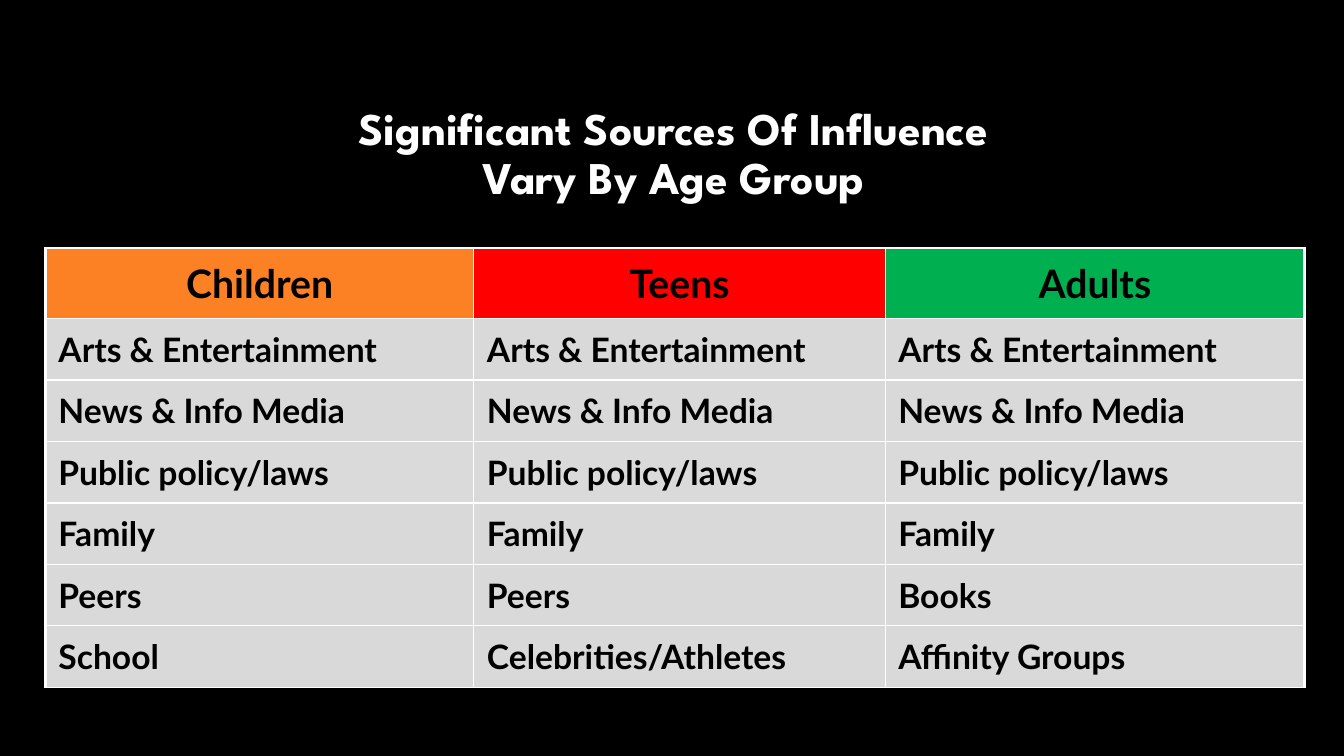
import pptx
import pptx.util
import pptx.dml.color
import pptx.enum.text
import pptx.oxml.ns
from lxml import etree

Inches, Pt = pptx.util.Inches, pptx.util.Pt
RGB = pptx.dml.color.RGBColor.from_string
ALIGN = pptx.enum.text.PP_ALIGN
MIDDLE = pptx.enum.text.MSO_ANCHOR.MIDDLE
qn = pptx.oxml.ns.qn

COLORS = {"black": "000000", "white": "FFFFFF", "children": "FC8124",
          "teens": "FF0000", "adults": "00B050", "body": "D9D9D9", "policy": "DADADA"}


def add_run(p, text, font, size, color):
    r = p.add_run()
    r.text = text
    r.font.name, r.font.size, r.font.bold = font, Pt(size), True
    r.font.color.rgb = RGB(COLORS[color])


def set_borders(cell, widths):
    """Draw white borders; widths holds points for left, right, top, bottom."""
    tc_pr = cell._tc.get_or_add_tcPr()
    for i, (side, width) in enumerate(zip("LRTB", widths)):
        ln = etree.Element(qn("a:ln" + side), w=str(int(Pt(width))))
        fill = etree.SubElement(ln, qn("a:solidFill"))
        etree.SubElement(fill, qn("a:srgbClr"), val=COLORS["white"])
        tc_pr.insert(i, ln)


prs = pptx.Presentation()
prs.slide_width, prs.slide_height = Inches(13.33), Inches(7.5)
s = prs.slides.add_slide(prs.slide_layouts[6])
s.background.fill.solid()
s.background.fill.fore_color.rgb = RGB(COLORS["black"])

# Title
tf = s.shapes.add_textbox(Inches(3.17), Inches(0.84), Inches(7.02), Inches(1.41)).text_frame
tf.word_wrap = True
tf.vertical_anchor = MIDDLE
p = tf.paragraphs[0]
p.alignment, p.line_spacing = ALIGN.CENTER, 0.9
add_run(p, "Significant Sources Of Influence", "League Spartan", 32.4, "white")
p.add_line_break()
add_run(p, "Vary By Age Group", "League Spartan", 32.4, "white")

# Table of influences by age group
rows = [
    ("Children", "Teens", "Adults"),
    ("Arts & Entertainment",) * 3,
    ("News & Info Media",) * 3,
    ("Public policy/laws",) * 3,
    ("Family",) * 3,
    ("Peers", "Peers", "Books"),
    ("School", "Celebrities/Athletes", "Affinity Groups"),
]
col_widths = [4.25, 4.08, 4.16]
table = s.shapes.add_table(len(rows), 3, Inches(0.45), Inches(2.46),
                           Inches(12.49), Inches(4.38)).table
table.horz_banding = False
for col, width in zip(table.columns, col_widths):
    col.width = Inches(width)

for i, row in enumerate(rows):
    header = i == 0
    table.rows[i].height = Inches(0.7 if header else 0.61)
    for j, text in enumerate(row):
        cell = table.cell(i, j)
        cell.vertical_anchor = MIDDLE
        cell.margin_left = cell.margin_right = Inches(0.13)
        cell.margin_top = cell.margin_bottom = Inches(0.05)
        fill = text.lower() if header else "policy" if i == 3 else "body"
        cell.fill.solid()
        cell.fill.fore_color.rgb = RGB(COLORS[fill])
        p = cell.text_frame.paragraphs[0]
        p.alignment = ALIGN.CENTER if header else ALIGN.LEFT
        add_run(p, text, "Lato", 28 if header else 24, "black")
        # Thick outer edges on the left, right and top
        set_borders(cell, (2.25 if j == 0 else 1, 2.25 if j == 2 else 1,
                           2.25 if header else 1, 1))

prs.save("out.pptx")
